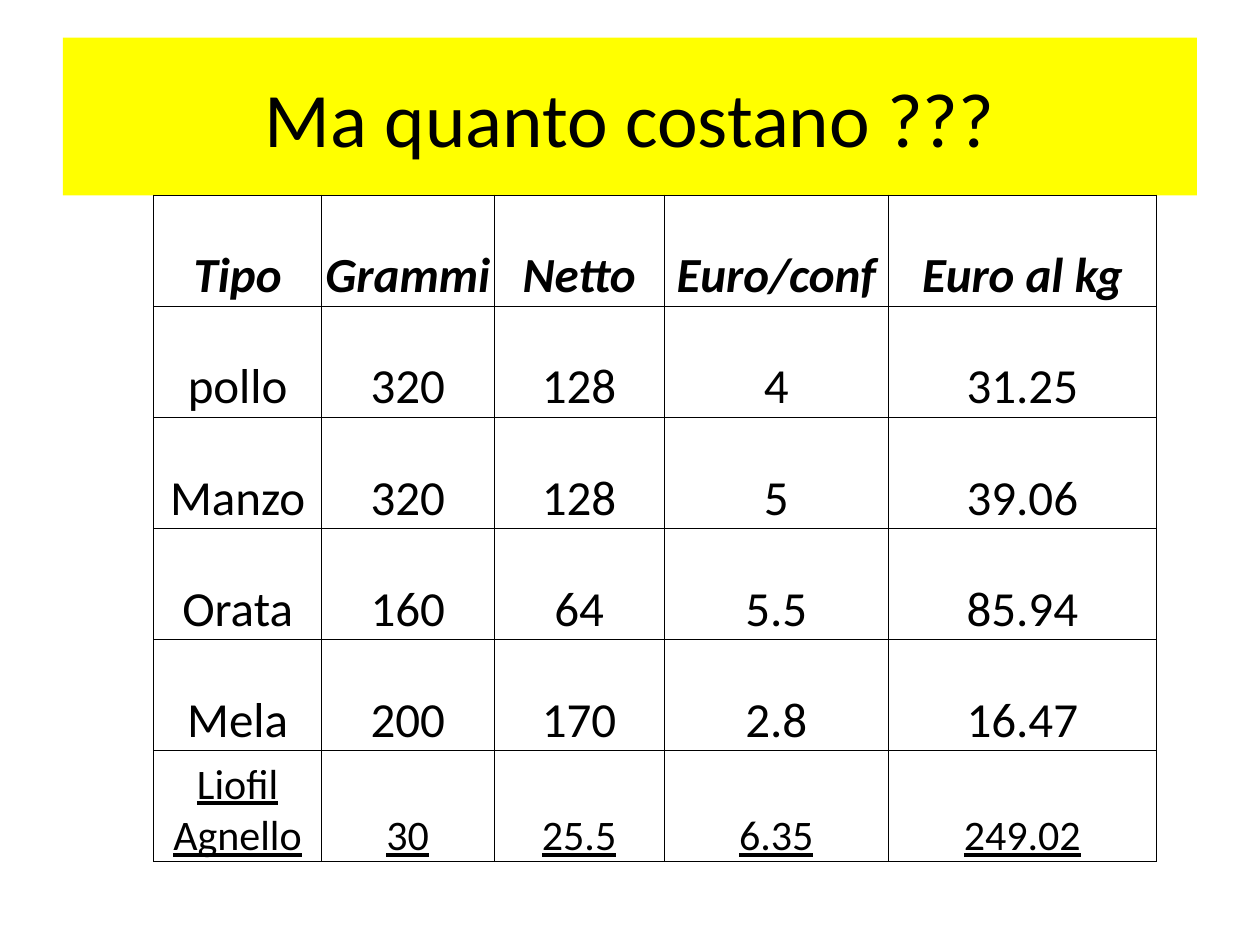
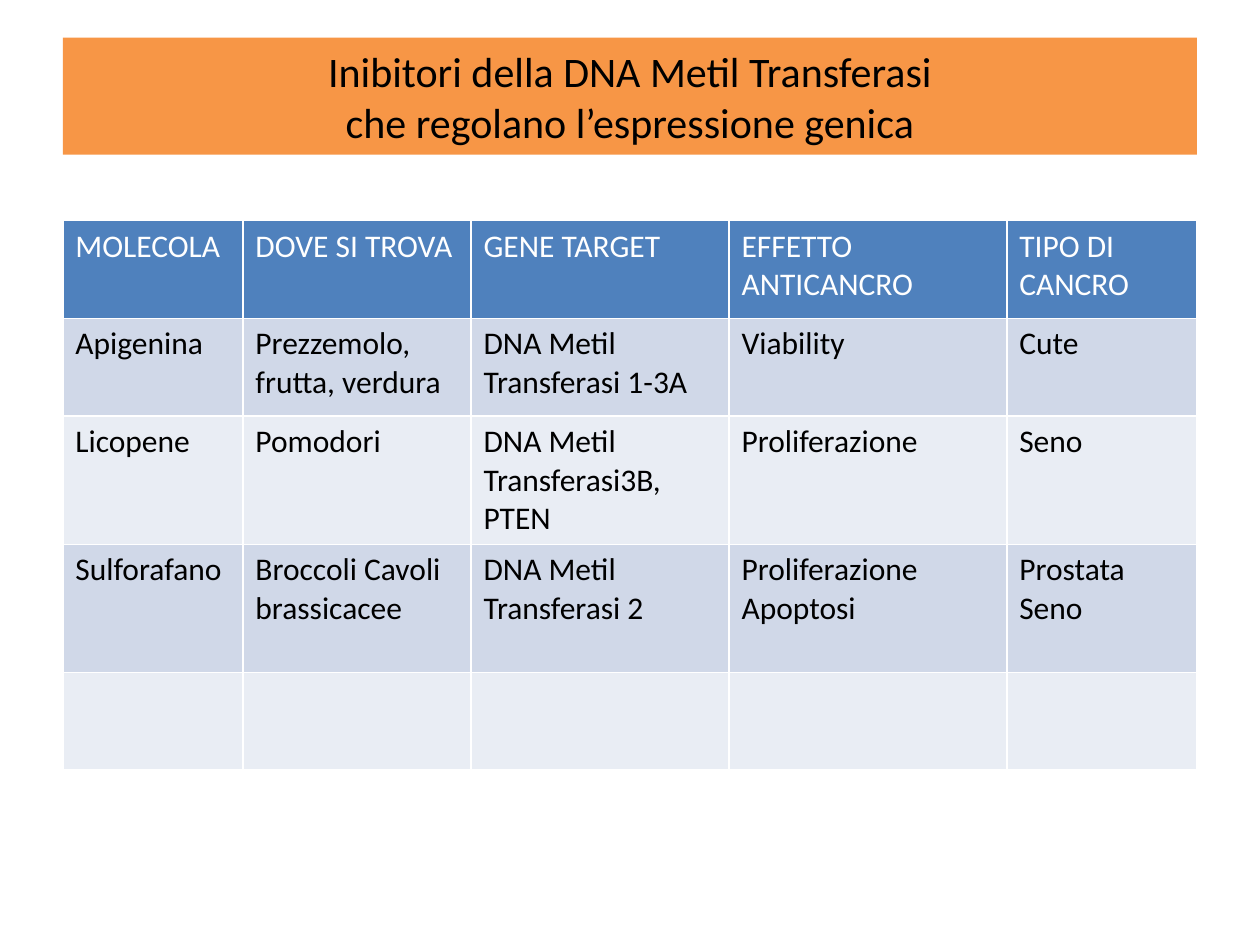
from dataclasses import dataclass, field

from lxml.etree import SubElement
from pptx import Presentation
from pptx.dml.color import RGBColor
from pptx.enum.shapes import MSO_SHAPE
from pptx.enum.text import MSO_ANCHOR, PP_ALIGN
from pptx.oxml.ns import qn
from pptx.slide import Slide
from pptx.table import _Cell
from pptx.text.text import TextFrame
from pptx.util import Cm, Pt


@dataclass(frozen=True)
class Theme:
    font: str = "Calibri"
    black: str = "000000"
    white: str = "FFFFFF"
    yellow: str = "FFFF00"
    orange: str = "F79646"
    header_blue: str = "4F81BD"
    bands: tuple[str, str] = ("D0D8E8", "E9EDF4")
    large_title: int = 44
    small_title: int = 24
    price_size: int = 28
    highlight_size: int = 24
    molecule_size: int = 18


THEME = Theme()


@dataclass(frozen=True)
class TextStyle:
    size: int
    color: str = THEME.black
    bold: bool = False
    italic: bool = False
    underline: bool = False
    align: PP_ALIGN = PP_ALIGN.LEFT


@dataclass(frozen=True)
class TitleBand:
    text: str
    height: float
    fill: str
    size: int


@dataclass(frozen=True)
class RowLook:
    style: TextStyle
    height: float
    fill: str | None = None


@dataclass(frozen=True)
class Grid:
    left: float
    top: float
    widths: list[float]
    rows: list[list[str]]
    looks: list[RowLook]
    border_color: str
    border_width: float
    anchor: MSO_ANCHOR = MSO_ANCHOR.TOP
    margins: tuple[float, float, float, float] = field(default=(0.25, 0.13, 0.25, 0.13))


def write_text(frame: TextFrame, text: str, style: TextStyle) -> None:
    frame.word_wrap = True
    frame.text = text
    for para in frame.paragraphs:
        para.alignment = style.align
        for span in para.runs:
            span.font.name = THEME.font
            span.font.size = Pt(style.size)
            span.font.bold = style.bold
            span.font.italic = style.italic
            span.font.underline = style.underline
            span.font.color.rgb = RGBColor.from_string(style.color)


def draw_title(page: Slide, band: TitleBand) -> None:
    box = page.shapes.add_shape(
        MSO_SHAPE.RECTANGLE, Cm(1.27), Cm(0.76), Cm(22.86), Cm(band.height)
    )
    box.shadow.inherit = False
    box.fill.solid()
    box.fill.fore_color.rgb = RGBColor.from_string(band.fill)
    box.line.fill.background()
    box.text_frame.vertical_anchor = MSO_ANCHOR.MIDDLE
    write_text(box.text_frame, band.text, TextStyle(band.size, align=PP_ALIGN.CENTER))


def draw_borders(cell: _Cell, color: str, width: float) -> None:
    properties = cell._tc.get_or_add_tcPr()
    for side in ("lnL", "lnR", "lnT", "lnB"):
        line = SubElement(properties, qn(f"a:{side}"), w=str(Pt(width)))
        fill = SubElement(line, qn("a:solidFill"))
        SubElement(fill, qn("a:srgbClr"), val=color)


def draw_cell(cell: _Cell, text: str, look: RowLook, grid: Grid) -> None:
    draw_borders(cell, grid.border_color, grid.border_width)
    if look.fill is None:
        cell.fill.background()
    else:
        cell.fill.solid()
        cell.fill.fore_color.rgb = RGBColor.from_string(look.fill)
    cell.vertical_anchor = grid.anchor
    cell.margin_left, cell.margin_top, cell.margin_right, cell.margin_bottom = map(
        Cm, grid.margins
    )
    write_text(cell.text_frame, text, look.style)


def draw_grid(page: Slide, grid: Grid) -> None:
    table = page.shapes.add_table(
        len(grid.rows), len(grid.widths), Cm(grid.left), Cm(grid.top),
        Cm(sum(grid.widths)), Cm(sum(look.height for look in grid.looks)),
    ).table
    table.first_row = False
    table.horz_banding = False
    for column, width in zip(table.columns, grid.widths):
        column.width = Cm(width)
    for row, look, texts in zip(table.rows, grid.looks, grid.rows):
        row.height = Cm(look.height)
        for cell, text in zip(row.cells, texts):
            draw_cell(cell, text, look, grid)


def price_grid() -> Grid:
    rows = [
        ["Tipo", "Grammi", "Netto", "Euro/conf", "Euro al kg"],
        ["pollo", "320", "128", "4", "31.25"],
        ["Manzo", "320", "128", "5", "39.06"],
        ["Orata", "160", "64", "5.5", "85.94"],
        ["Mela", "200", "170", "2.8", "16.47"],
        ["Liofil Agnello", "30", "25.5", "6.35", "249.02"],
    ]
    center = PP_ALIGN.CENTER
    header = TextStyle(THEME.price_size, bold=True, italic=True, align=center)
    body = TextStyle(THEME.price_size, align=center)
    highlight = TextStyle(THEME.highlight_size, underline=True, align=center)
    styles = [header] + [body] * (len(rows) - 2) + [highlight]
    return Grid(
        left=3.1, top=3.93, widths=[3.38, 3.48, 3.43, 4.52, 5.4], rows=rows,
        looks=[RowLook(style, 2.24) for style in styles],
        border_color=THEME.black, border_width=0.5,
        anchor=MSO_ANCHOR.BOTTOM, margins=(0.03, 0.03, 0.03, 0),
    )


def molecule_grid() -> Grid:
    rows = [
        ["MOLECOLA", "DOVE SI TROVA", "GENE TARGET", "EFFETTO ANTICANCRO", "TIPO DI CANCRO"],
        ["Apigenina", "Prezzemolo, frutta, verdura", "DNA Metil Transferasi 1-3A",
         "Viability", "Cute"],
        ["Licopene", "Pomodori", "DNA Metil Transferasi3B, PTEN", "Proliferazione", "Seno"],
        ["Sulforafano", "Broccoli Cavoli brassicacee", "DNA Metil Transferasi 2",
         "Proliferazione Apoptosi", "Prostata\nSeno"],
        [""] * 5,
    ]
    header = TextStyle(THEME.molecule_size, color=THEME.white)
    body = TextStyle(THEME.molecule_size)
    short, tall = 1.97, 2.58
    looks = [RowLook(header, short, THEME.header_blue)] + [
        RowLook(body, height, THEME.bands[index % 2])
        for index, height in enumerate([short, tall, tall, short])
    ]
    return Grid(
        left=1.27, top=4.45, widths=[3.63, 4.6, 5.2, 5.6, 3.83], rows=rows,
        looks=looks, border_color=THEME.white, border_width=1,
    )


def main() -> None:
    deck = Presentation()
    deck.slide_width, deck.slide_height = Cm(25.4), Cm(19.05)
    contents = [
        (TitleBand("Ma quanto costano ???", 3.18, THEME.yellow, THEME.large_title),
         price_grid()),
        (TitleBand("Inibitori della DNA Metil Transferasi\vche regolano l’espressione genica",
                   2.36, THEME.orange, THEME.small_title),
         molecule_grid()),
    ]
    for band, grid in contents:
        page = deck.slides.add_slide(deck.slide_layouts[6])
        draw_title(page, band)
        draw_grid(page, grid)
    deck.save("out.pptx")


if __name__ == "__main__":
    main()
